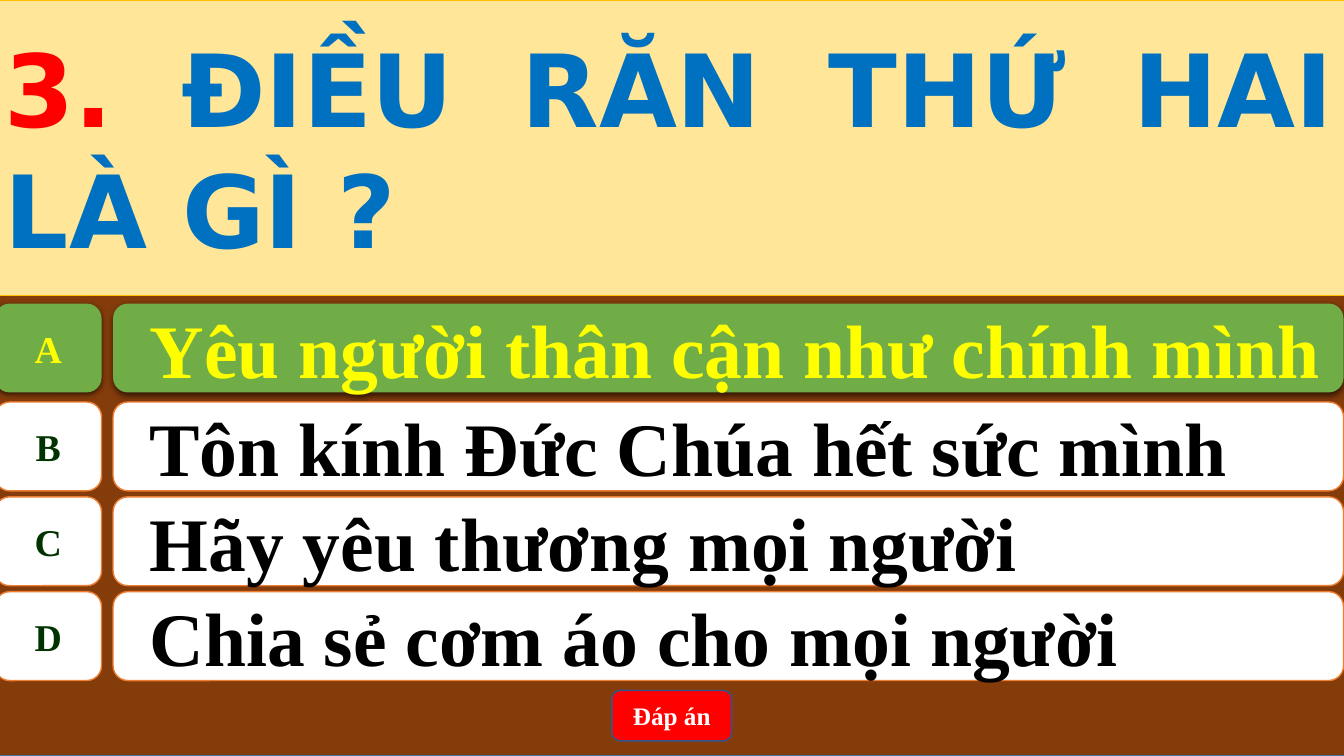
from lxml.etree import SubElement
from pptx import Presentation
from pptx.dml.color import RGBColor
from pptx.enum.shapes import MSO_SHAPE
from pptx.enum.text import MSO_ANCHOR, MSO_AUTO_SIZE, PP_ALIGN
from pptx.oxml import parse_xml
from pptx.oxml.ns import nsdecls, qn
from pptx.util import Cm, Pt

COLORS = {
    "brown": "843C0B", "steel": "43739E", "cream": "FFE699", "gold": "FFC000",
    "red": "FF0000", "blue": "0070C0", "navy": "325491", "green": "70AD47",
    "yellow": "FFFF00", "orange": "ED7D31", "white": "FFFFFF",
    "black": "000000", "forest": "003300",
}
SERIF, SANS = "Times New Roman", "DejaVu Sans"
LEFT, WIDE = -0.13, 34.01
CHOICES = [
    ("A", "Yêu người thân cận như chính mình", 7.65),
    ("B", "Tôn kính Đức Chúa hết sức mình", 10.13),
    ("C", "Hãy yêu thương mọi người", 12.52),
    ("D", "Chia sẻ cơm áo cho mọi người", 14.91),
]


def tint(name):
    return RGBColor.from_string(COLORS[name])


def write(para, text, size=18, color="black", font=SERIF, align=None):
    """Add one bold run to a paragraph."""
    run = para.add_run()
    run.text = text
    run.font.size, run.font.name, run.font.bold = Pt(size), font, True
    run.font.color.rgb = tint(color)
    if align is not None:
        para.alignment = align


class Quiz:
    def __init__(self, deck):
        self.slide = deck.slides.add_slide(deck.slide_layouts[5])

    def paint(self, shape, fill, line=None, weight=1):
        shape.fill.solid()
        shape.fill.fore_color.rgb = tint(fill)
        if line:
            shape.line.color.rgb = tint(line)
            shape.line.width = Pt(weight)
        else:
            shape.line.fill.background()

    def box(self, kind, place, fill, line=None):
        shape = self.slide.shapes.add_shape(kind, *map(Cm, place))
        shape.shadow.inherit = False
        self.paint(shape, fill, line)
        shape.text_frame.vertical_anchor = MSO_ANCHOR.MIDDLE
        return shape

    def shade(self, shape):
        props = shape.element.spPr
        effects = props.find(qn("a:effectLst"))
        effects.append(parse_xml(
            f'<a:outerShdw {nsdecls("a")} blurRad="{Pt(4.5)}" dist="{Pt(1.5)}" '
            f'dir="5400000" rotWithShape="0"><a:srgbClr val="{COLORS["black"]}">'
            '<a:alpha val="63000"/></a:srgbClr></a:outerShdw>'))

    def choice(self, letter, text, top, right=False):
        fill, line = ("green", None) if right else ("white", "orange")
        # Letter badge
        badge = self.box(MSO_SHAPE.FLOWCHART_ALTERNATE_PROCESS,
                         (LEFT, top, 2.69, 2.24), fill, line)
        badge.text_frame.word_wrap = False
        write(badge.text_frame.paragraphs[0], letter, size=27,
              color="yellow" if right else "forest", align=PP_ALIGN.CENTER)
        # Answer bar with a hanging indent
        bar = self.box(MSO_SHAPE.ROUNDED_RECTANGLE,
                       (2.85, top, 31.01, 2.24), fill, line)
        para = bar.text_frame.paragraphs[0]
        para.level = 1
        write(para, text, size=54, color="yellow" if right else "black",
              align=PP_ALIGN.LEFT)
        indent = para._p.get_or_add_pPr()
        indent.set("marL", str(Cm(1.27)))
        indent.set("indent", str(Cm(-0.71)))
        if right:
            self.shade(badge)
            self.shade(bar)

    def button(self, text, place):
        shape = self.box(MSO_SHAPE.ROUNDED_RECTANGLE, place, "red", "navy")
        write(shape.text_frame.paragraphs[0], text, color="white",
              align=PP_ALIGN.CENTER)

    def title(self, parts, place):
        head = self.slide.shapes.title
        head.left, head.top, head.width, head.height = map(Cm, place)
        self.paint(head, "cream", "gold", 0.5)
        frame = head.text_frame
        frame.word_wrap, frame.auto_size = True, MSO_AUTO_SIZE.NONE
        frame.vertical_anchor = MSO_ANCHOR.MIDDLE
        for text, color in parts:
            write(frame.paragraphs[0], text, size=72, color=color, font=SANS,
                  align=PP_ALIGN.JUSTIFY)
        # Bring the title in front of the backdrop
        head.element.getparent().append(head.element)


def main():
    deck = Presentation()
    deck.slide_width, deck.slide_height = Cm(33.87), Cm(19.05)
    quiz = Quiz(deck)
    # Backdrop
    quiz.box(MSO_SHAPE.RECTANGLE, (LEFT, 0, WIDE, 19.05), "brown", "steel")
    # Answers
    for letter, text, top in CHOICES:
        quiz.choice(letter, text, top, right=letter == "A")
    quiz.button("Đáp án", (15.42, 17.4, 3.02, 1.27))
    # Question
    quiz.title([("3. ", "red"), ("ĐIỀU RĂN THỨ HAI LÀ GÌ ?", "blue")],
               (LEFT, 0, WIDE, 7.44))
    deck.save("out.pptx")


if __name__ == "__main__":
    main()
